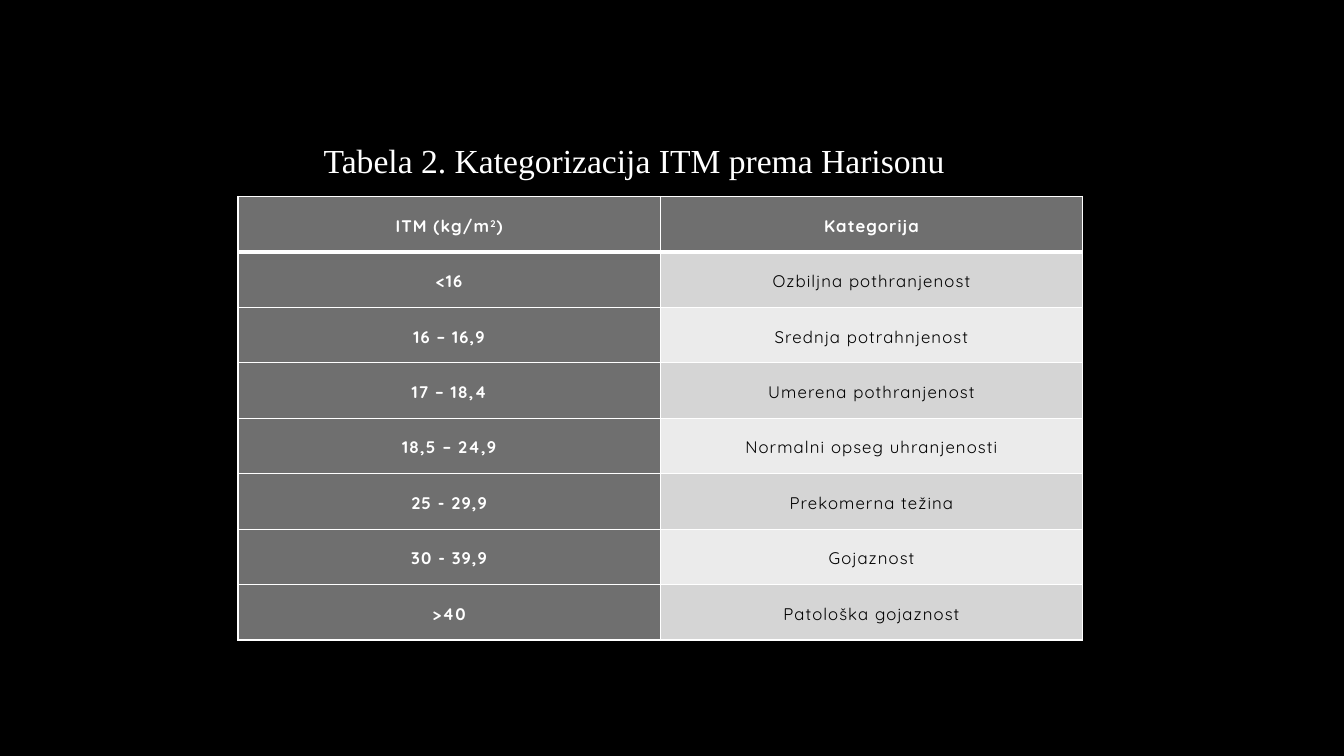
"""Build a slide with a table of body mass index categories."""
from lxml.etree import SubElement
from pptx import Presentation
from pptx.dml.color import RGBColor
from pptx.enum.text import MSO_ANCHOR, MSO_AUTO_SIZE, PP_ALIGN
from pptx.oxml.ns import qn
from pptx.util import Inches, Pt

TITLE = "Tabela 2. Kategorizacija ITM prema Harisonu"
HEADER = (("ITM (kg/m", "2", ")"), ("Kategorija",))
CATEGORIES = [
    ("<16", "Ozbiljna pothranjenost"),
    ("16 – 16,9", "Srednja potrahnjenost"),
    ("17 – 18,4", "Umerena pothranjenost"),
    ("18,5 – 24,9", "Normalni opseg uhranjenosti"),
    ("25 - 29,9", "Prekomerna težina"),
    ("30 - 39,9", "Gojaznost"),
    (">40", "Patološka gojaznost"),
]
ROWS = [HEADER] + [((limits,), (category,)) for limits, category in CATEGORIES]

THEME = {
    "background": "000000",
    "light": "FFFFFF",
    "dark": "000000",
    "heading": "6F6F6F",
    "bands": ("D5D5D5", "EBEBEB"),
    "title": {"name": "Times New Roman", "size": Pt(24), "bold": False},
    "cell": {"name": "Quicksand", "size": Pt(12)},
    "tracking": "80",
    "superscript": "30000",
    "line_spacing": 1.15,
    "rule": 1,
    "header_rule": 3,
}
SLIDE_SIZE = (13.33, 7.5)
TITLE_BOX = (3.11, 1.28, 6.41, 0.53)
TABLE_LEFT, TABLE_TOP = 2.36, 1.95
COLUMN_WIDTH, ROW_HEIGHT = 4.19, 0.55


def apply_format(target, values):
    for attribute, value in values.items():
        setattr(target, attribute, value)


def add_rule(cell, side, points):
    rule = SubElement(cell._tc.get_or_add_tcPr(), qn(f"a:ln{side}"), w=str(Pt(points)))
    fill = SubElement(rule, qn("a:solidFill"))
    SubElement(fill, qn("a:srgbClr"), val=THEME["light"])


def add_title(slide):
    title = slide.shapes.title
    placement = zip(("left", "top", "width", "height"), map(Inches, TITLE_BOX))
    apply_format(title, dict(placement))
    apply_format(title.text_frame, {
        "text": TITLE,
        "word_wrap": False,
        "auto_size": MSO_AUTO_SIZE.SHAPE_TO_FIT_TEXT,
        "vertical_anchor": MSO_ANCHOR.TOP,
    })
    line = title.text_frame.paragraphs[0]
    apply_format(line, {"alignment": PP_ALIGN.JUSTIFY,
                        "line_spacing": THEME["line_spacing"]})
    apply_format(line.runs[0].font, THEME["title"])
    line.runs[0].font.color.rgb = RGBColor.from_string(THEME["light"])


def fill_cell(cell, pieces, row, column):
    is_heading = row == 0 or column == 0
    apply_format(cell, {
        "margin_left": Inches(0.07), "margin_right": Inches(0.07),
        "margin_top": 0, "margin_bottom": 0,
        "vertical_anchor": MSO_ANCHOR.MIDDLE,
    })
    for side in "LRTB":
        under_header = (row, side) in ((0, "B"), (1, "T"))
        add_rule(cell, side, THEME["header_rule" if under_header else "rule"])
    cell.fill.solid()
    shade = THEME["heading"] if is_heading else THEME["bands"][(row - 1) % 2]
    cell.fill.fore_color.rgb = RGBColor.from_string(shade)

    line = cell.text_frame.paragraphs[0]
    apply_format(line, {"alignment": PP_ALIGN.CENTER,
                        "line_spacing": THEME["line_spacing"]})
    ink = RGBColor.from_string(THEME["light" if is_heading else "dark"])
    for position, piece in enumerate(pieces):
        run = line.add_run()
        run.text = piece
        apply_format(run.font, THEME["cell"] | {"bold": is_heading})
        run.font.color.rgb = ink
        properties = run._r.get_or_add_rPr()
        properties.set("spc", THEME["tracking"])
        if position == 1:
            properties.set("baseline", THEME["superscript"])


def add_categories(slide):
    columns = len(HEADER)
    table = slide.shapes.add_table(
        len(ROWS), columns, Inches(TABLE_LEFT), Inches(TABLE_TOP),
        Inches(COLUMN_WIDTH * columns), Inches(ROW_HEIGHT * len(ROWS))).table
    for row, entries in enumerate(ROWS):
        for column, pieces in enumerate(entries):
            fill_cell(table.cell(row, column), pieces, row, column)


def main():
    deck = Presentation()
    deck.slide_width, deck.slide_height = map(Inches, SLIDE_SIZE)
    slide = deck.slides.add_slide(deck.slide_layouts[5])
    slide.background.fill.solid()
    slide.background.fill.fore_color.rgb = RGBColor.from_string(THEME["background"])
    add_categories(slide)
    add_title(slide)
    deck.save("out.pptx")


if __name__ == "__main__":
    main()
